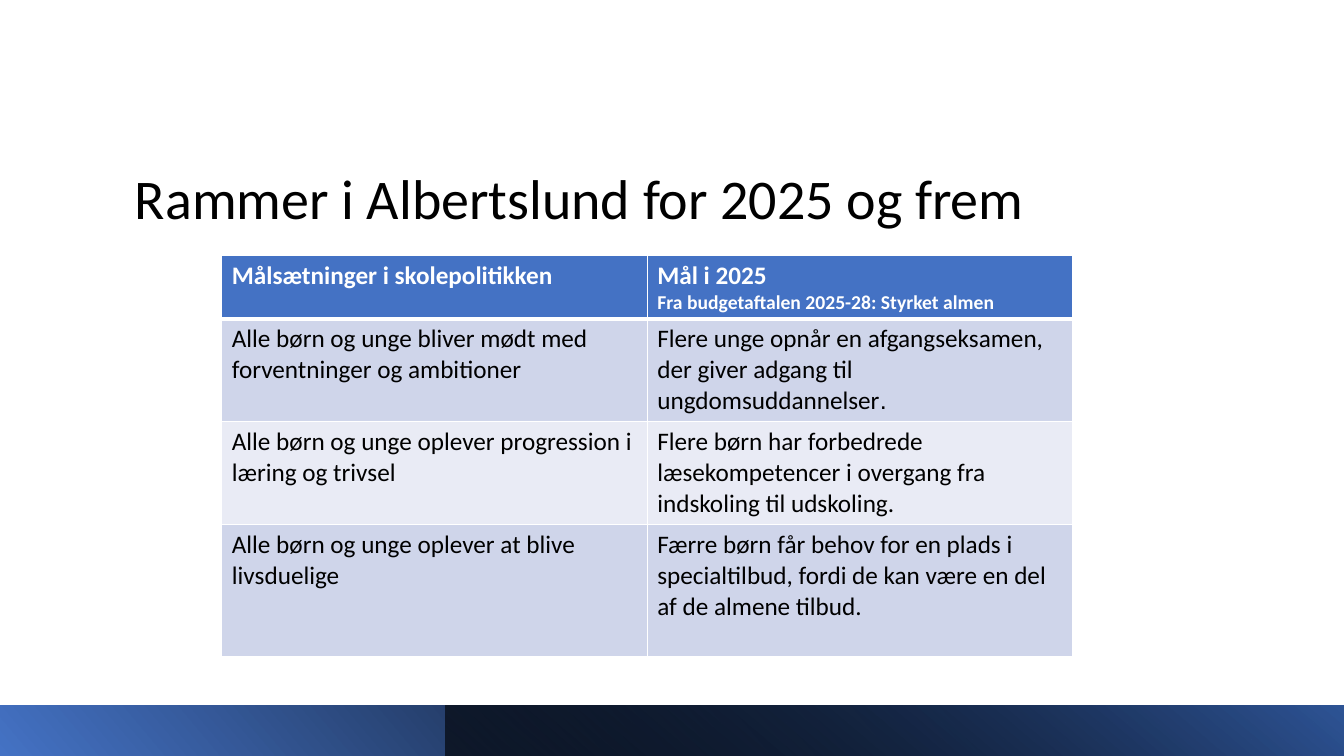
from dataclasses import dataclass

from pptx import Presentation
from pptx.dml.color import RGBColor
from pptx.enum import shapes, text
from pptx.oxml.ns import qn
from pptx.util import Inches, Pt
from lxml import etree


@dataclass(frozen=True)
class Theme:
    font: str = "Calibri"
    full_stop_font: str = "Arial"
    ink: str = "000000"
    paper: str = "FFFFFF"
    accent: str = "4472C4"
    deep_blue: str = "2F5597"
    bands: tuple = ("CFD5EA", "E9EBF5")
    title_size: int = 40
    body_size: int = 18
    note_size: int = 14


THEME = Theme()

HEADINGS = ("Målsætninger i skolepolitikken",
            "Mål i 2025\nFra budgetaftalen 2025-28: Styrket almen")
GOALS = (
    ("Alle børn og unge bliver mødt med forventninger og ambitioner",
     "Flere unge opnår en afgangseksamen, der giver adgang til ungdomsuddannelser."),
    ("Alle børn og unge oplever progression i læring og trivsel",
     "Flere børn har forbedrede læsekompetencer i overgang fra indskoling til udskoling."),
    ("Alle børn og unge oplever at blive livsduelige",
     "Færre børn får behov for en plads i specialtilbud, "
     "fordi de kan være en del af de almene tilbud."),
)
ROW_HEIGHTS = (0.63, 1.02, 1.02, 1.31)


def rgb(colour):
    return RGBColor.from_string(colour)


def style_run(run, size, colour, bold=False):
    run.font.name = THEME.font
    run.font.size = Pt(size)
    run.font.bold = bold
    run.font.color.rgb = rgb(colour)


def add_title(slide, left, top, width, height):
    title = slide.shapes.add_textbox(*map(Inches, (left, top, width, height)))
    frame = title.text_frame
    frame.word_wrap = True
    frame.vertical_anchor = text.MSO_ANCHOR.BOTTOM
    frame.text = "Rammer i Albertslund for 2025 og frem"
    frame.paragraphs[0].line_spacing = 0.9
    style_run(frame.paragraphs[0].runs[0], THEME.title_size, THEME.ink)


def add_gradient_band(slide, left, top, width, height, stops, angle, rotation=0):
    band = slide.shapes.add_shape(shapes.MSO_SHAPE.RECTANGLE,
                                  *map(Inches, (left, top, width, height)))
    band.shadow.inherit = False
    band.line.fill.background()
    band.rotation = rotation
    band._element.spPr.find(qn("a:xfrm")).set("flipH", "1")
    band.fill.gradient()
    band.fill.gradient_angle = 360 - angle
    for stop, (position, colour, opacity) in zip(band.fill.gradient_stops, stops):
        stop.position = position
        stop.color.rgb = rgb(colour)
        if opacity < 1:
            colour_node = stop._gs.find(qn("a:srgbClr"))
            etree.SubElement(colour_node, qn("a:alpha"), val=str(round(opacity * 100000)))


def add_footer(slide, left, top, width, height):
    add_gradient_band(slide, left, top, width, height,
                      ((0, THEME.accent, 1), (0.78, THEME.ink, 1)), 40, 180)
    overlay_left = left + 4.42
    add_gradient_band(slide, overlay_left, top, left + width - overlay_left, height,
                      ((0, THEME.ink, 0.63), (1, THEME.deep_blue, 1)), 230)


def set_borders(cell, bottom=1, top=1):
    properties = cell._tc.get_or_add_tcPr()
    widths = {"a:lnL": 1, "a:lnR": 1, "a:lnT": top, "a:lnB": bottom}
    for place, (side, width) in enumerate(widths.items()):
        line = etree.Element(qn(side), w=str(Pt(width)))
        fill = etree.SubElement(line, qn("a:solidFill"))
        etree.SubElement(fill, qn("a:srgbClr"), val=THEME.paper)
        properties.insert(place, line)


def fill_cell(cell, wording, fill, colour, heading=False):
    cell.fill.solid()
    cell.fill.fore_color.rgb = rgb(fill)
    cell.text_frame.text = wording
    for index, paragraph in enumerate(cell.text_frame.paragraphs):
        size = THEME.note_size if index else THEME.body_size
        style_run(paragraph.runs[0], size, colour, heading)


def add_goal_table(slide, left, top, width):
    frame = slide.shapes.add_table(len(ROW_HEIGHTS), len(HEADINGS),
                                   *map(Inches, (left, top, width, sum(ROW_HEIGHTS))))
    table = frame.table
    for row, height in zip(table.rows, ROW_HEIGHTS):
        row.height = Inches(height)
    for column in table.columns:
        column.width = Inches(width / len(HEADINGS))
    for column, heading in enumerate(HEADINGS):
        cell = table.cell(0, column)
        fill_cell(cell, heading, THEME.accent, THEME.paper, True)
        set_borders(cell, bottom=3)
    for row, goals in enumerate(GOALS, 1):
        for column, goal in enumerate(goals):
            cell = table.cell(row, column)
            fill_cell(cell, goal, THEME.bands[(row - 1) % 2], THEME.ink)
            set_borders(cell, top=3 if row == 1 else 1)
    exam_goal = table.cell(1, 1).text_frame.paragraphs[0]
    exam_goal.runs[0].text = exam_goal.text.rstrip(".")
    full_stop = exam_goal.add_run()
    full_stop.text = "."
    style_run(full_stop, THEME.body_size, THEME.ink)
    full_stop.font.name = THEME.full_stop_font


def build_goals_slide(deck):
    slide = deck.slides.add_slide(deck.slide_layouts[6])
    slide.background.fill.solid()
    slide.background.fill.fore_color.rgb = rgb(THEME.paper)
    add_title(slide, 1.24, 0.55, 10.6, 1.8)
    add_footer(slide, 0, 7, 13.33, 0.5)
    add_goal_table(slide, 2.2, 2.53, 8.44)


def main():
    deck = Presentation()
    deck.slide_width = Inches(13.33)
    deck.slide_height = Inches(7.5)
    build_goals_slide(deck)
    deck.save("out.pptx")


if __name__ == "__main__":
    main()
